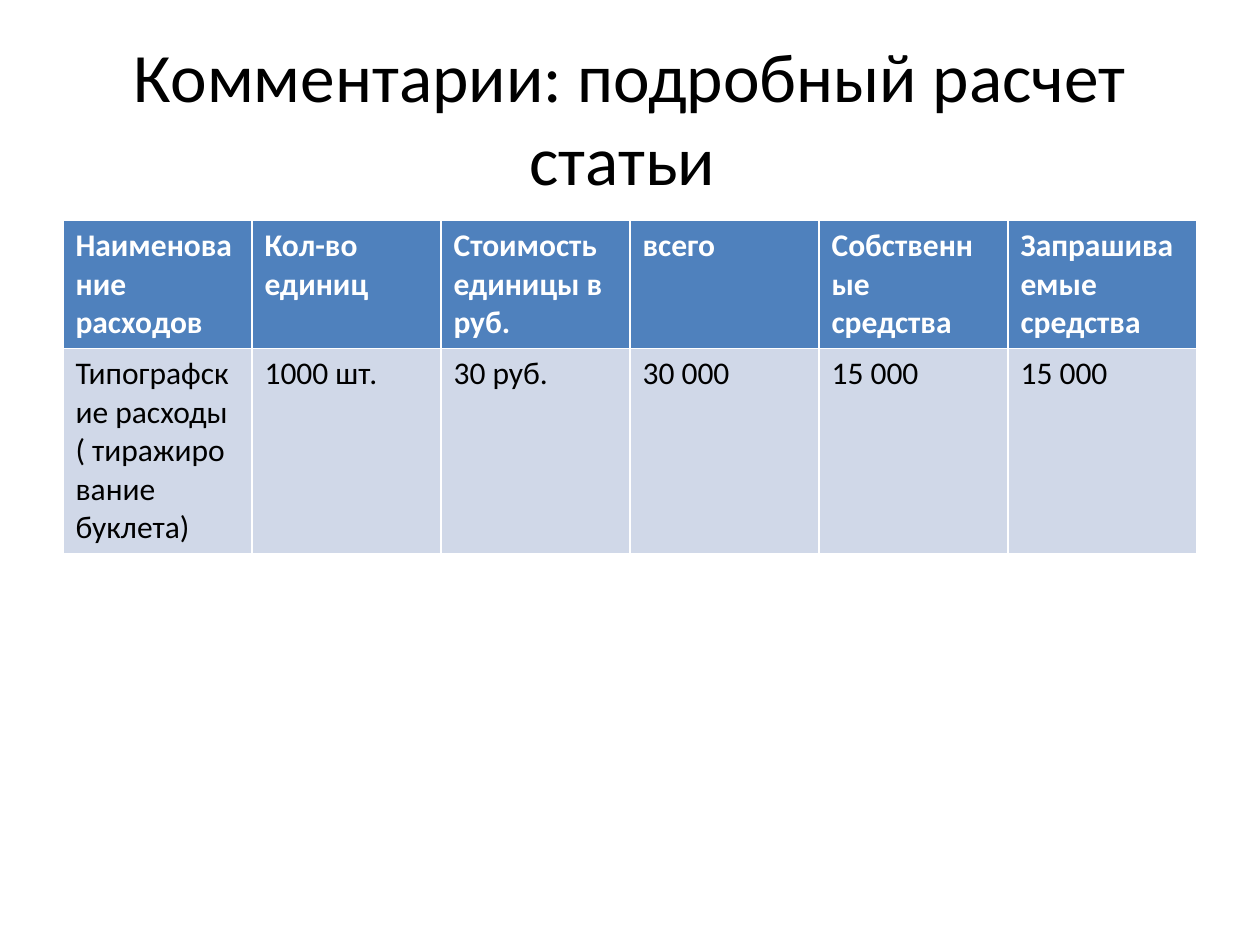
"""Build a slide with a detailed cost table."""
from dataclasses import dataclass

from pptx import Presentation
from pptx.dml.color import RGBColor
from pptx.enum.text import MSO_ANCHOR, MSO_AUTO_SIZE, PP_ALIGN
from pptx.util import Inches, Pt


@dataclass(frozen=True)
class Theme:
    font: str = "Calibri"
    black: str = "000000"
    white: str = "FFFFFF"
    head: str = "4F81BD"
    band: str = "D0D8E8"
    title: float = 39.6
    body: float = 18


def style(frame, size, color, bold=False):
    for par in frame.paragraphs:
        for run in par.runs:
            run.font.name = theme.font
            run.font.size = Pt(size)
            run.font.bold = bold
            run.font.color.rgb = RGBColor.from_string(color)


theme = Theme()
costs = [
    ["Наименование расходов", "Кол-во единиц", "Стоимость единицы в руб.",
     "всего", "Собственные средства", "Запрашиваемые средства"],
    ["Типографские расходы ( тиражирование буклета)", "1000 шт.", "30 руб.",
     "30 000", "15 000", "15 000"],
]

deck = Presentation()
deck.slide_width, deck.slide_height = Inches(10), Inches(7.5)
slide = deck.slides.add_slide(deck.slide_layouts[5])

title = slide.shapes.title
title.left, title.top = Inches(0.5), Inches(0.3)
title.width, title.height = Inches(9), Inches(1.25)
frame = title.text_frame
frame.text = "Комментарии: подробный расчет статьи "
frame.auto_size = MSO_AUTO_SIZE.NONE
frame.vertical_anchor = MSO_ANCHOR.MIDDLE
frame.paragraphs[0].alignment = PP_ALIGN.CENTER
style(frame, theme.title, theme.black)

table = slide.shapes.add_table(
    len(costs), len(costs[0]), Inches(0.5), Inches(1.75), Inches(9), Inches(0.82)
).table
looks = [(theme.head, theme.white, True), (theme.band, theme.black, False)]
for row, texts, (fill, color, bold) in zip(table.rows, costs, looks):
    for cell, text in zip(row.cells, texts):
        cell.text_frame.text = text
        cell.fill.solid()
        cell.fill.fore_color.rgb = RGBColor.from_string(fill)
        style(cell.text_frame, theme.body, color, bold)

deck.save("out.pptx")
